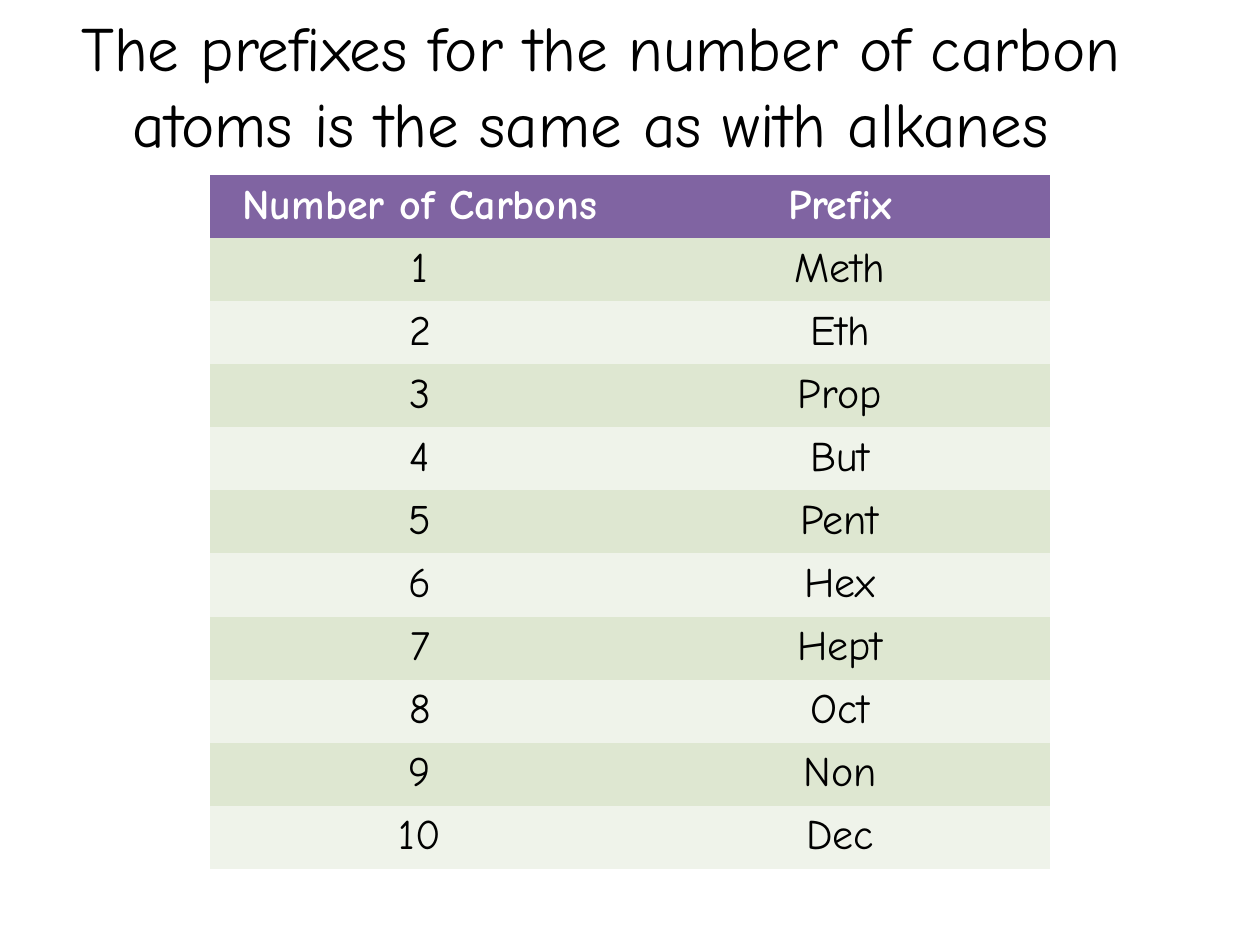
from dataclasses import dataclass

from pptx import Presentation
from pptx.dml.color import RGBColor
from pptx.enum import text
from pptx.oxml import ns
from pptx.util import Inches, Pt

FONT = "Comic Neue"
BLACK = RGBColor(0x00, 0x00, 0x00)
WHITE = RGBColor(0xFF, 0xFF, 0xFF)
PURPLE = RGBColor(0x80, 0x64, 0xA2)
GREEN = RGBColor(0xDE, 0xE7, 0xD1)
PALE_GREEN = RGBColor(0xEF, 0xF3, 0xEA)
NO_GRID_STYLE = "{2D5ABB26-0587-4C30-8999-92F81FD0307C}"

TITLE = "The prefixes for the number of carbon atoms is the same as with alkanes "
HEADINGS = ("Number of Carbons", "Prefix")
PREFIXES = ("Meth", "Eth", "Prop", "But", "Pent",
            "Hex", "Hept", "Oct", "Non", "Dec")


@dataclass
class RowStyle:
    fill: RGBColor
    color: RGBColor = BLACK
    bold: bool = False


HEADER = RowStyle(PURPLE, WHITE, True)
BANDS = (RowStyle(GREEN), RowStyle(PALE_GREEN))


def write(frame, content: str, size: int, color: RGBColor, bold: bool = False) -> None:
    """Put one centred paragraph into a text frame."""
    frame.text = content
    para = frame.paragraphs[0]
    para.alignment = text.PP_ALIGN.CENTER
    font = para.runs[0].font
    font.name, font.size, font.bold = FONT, Pt(size), bold
    font.color.rgb = color


def fill_row(row, values: tuple[str, str], style: RowStyle) -> None:
    """Write and colour the cells of one table row."""
    for cell, value in zip(row.cells, values):
        write(cell.text_frame, value, 24, style.color, style.bold)
        cell.fill.solid()
        cell.fill.fore_color.rgb = style.fill


deck = Presentation()
deck.slide_width, deck.slide_height = Inches(10), Inches(7.5)
page = deck.slides.add_slide(deck.slide_layouts[5])

# Title
title = page.shapes.title
title.left, title.top = Inches(0), Inches(0.02)
title.width, title.height = Inches(9.54), Inches(1.31)
write(title.text_frame, TITLE, 36, BLACK)
title.text_frame.word_wrap = True
title.text_frame.vertical_anchor = text.MSO_ANCHOR.TOP
title.text_frame.auto_size = text.MSO_AUTO_SIZE.SHAPE_TO_FIT_TEXT

# Prefix table: two thirds of the slide wide, centred, half-inch rows
row_count = len(PREFIXES) + 1
table_width = deck.slide_width * 2 // 3
table = page.shapes.add_table(
    row_count, len(HEADINGS), (deck.slide_width - table_width) // 2,
    Inches(1.39), table_width, Inches(0.5) * row_count).table
table._tbl.tblPr.find(ns.qn("a:tableStyleId")).text = NO_GRID_STYLE

fill_row(table.rows[0], HEADINGS, HEADER)
for number, prefix in enumerate(PREFIXES, start=1):
    fill_row(table.rows[number], (str(number), prefix), BANDS[(number - 1) % 2])

deck.save("out.pptx")
